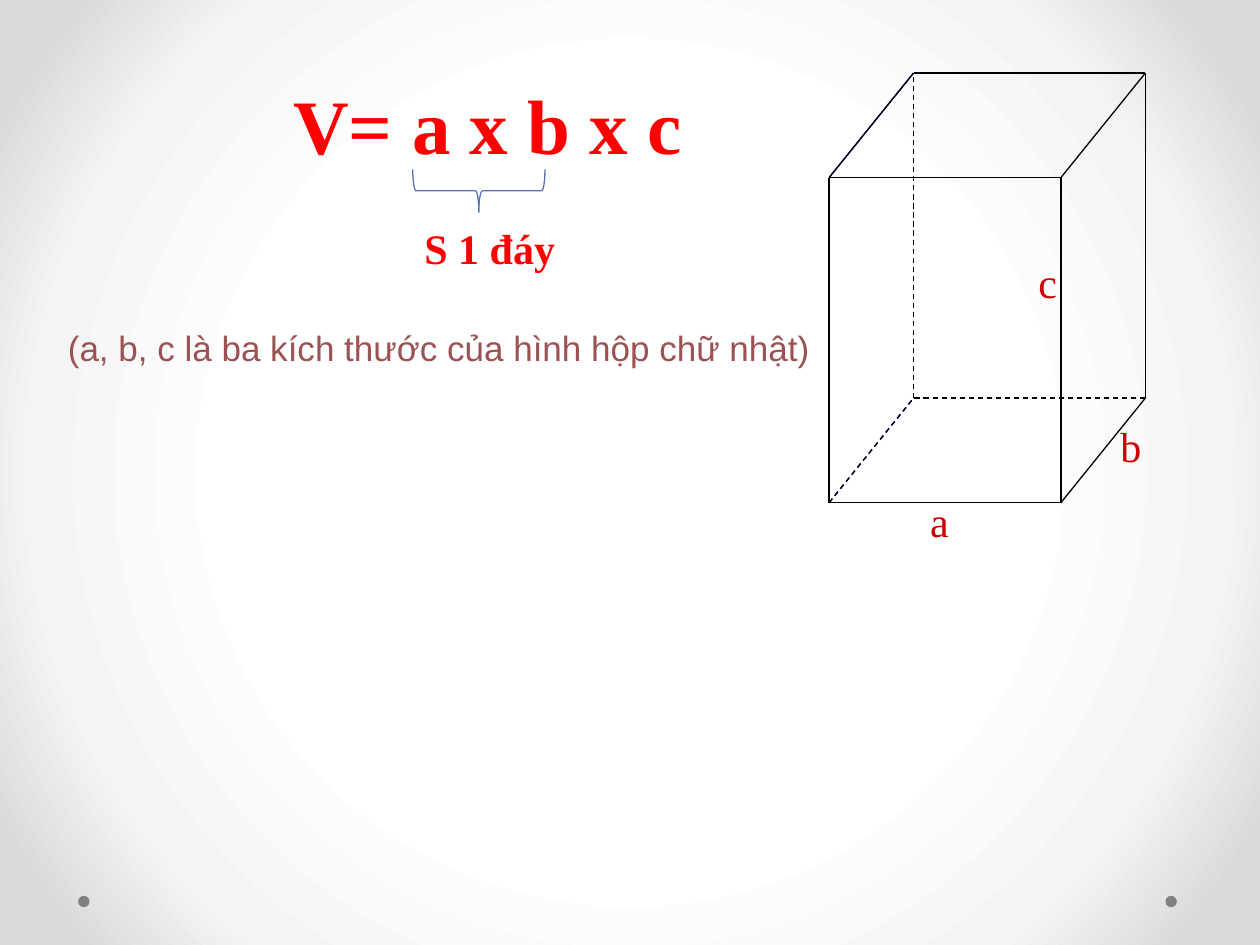
from pptx import Presentation
from pptx.dml.color import RGBColor
from pptx.enum.dml import MSO_LINE
from pptx.enum.shapes import MSO_CONNECTOR, MSO_SHAPE
from pptx.enum.text import MSO_AUTO_SIZE, PP_ALIGN
from pptx.oxml import parse_xml
from pptx.oxml.ns import nsdecls
from pptx.util import Inches, Pt
from lxml.etree import SubElement


def color(code):
    return RGBColor.from_string(code)


class Board:
    font = "Times New Roman"
    red = "FF0000"
    label = "CC0000"
    width = 0.75

    def __init__(self, deck):
        self.slide = deck.slides.add_slide(deck.slide_layouts[6])
        self.shapes = self.slide.shapes

    def back(self, stops):
        marks = "".join(
            f'<a:gs pos="{pos * 1000}"><a:srgbClr val="{code}"/></a:gs>'
            for pos, code in stops
        )
        node = parse_xml(
            f'<p:bg {nsdecls("p", "a")}><p:bgPr><a:gradFill rotWithShape="1">'
            f'<a:gsLst>{marks}</a:gsLst><a:path path="circle">'
            '<a:fillToRect l="50000" t="50000" r="50000" b="50000"/></a:path>'
            '</a:gradFill><a:effectLst/></p:bgPr></p:bg>'
        )
        self.slide.element.cSld.insert(0, node)

    def dot(self, x, y, size, code):
        dot = self.shapes.add_shape(
            MSO_SHAPE.OVAL, Inches(x), Inches(y), Inches(size), Inches(size))
        dot.shadow.inherit = False
        dot.fill.solid()
        dot.fill.fore_color.rgb = color(code)
        dot.line.fill.background()

    def edge(self, start, end, code, dash=False):
        ends = [Inches(v) for v in (*start, *end)]
        edge = self.shapes.add_connector(MSO_CONNECTOR.STRAIGHT, *ends)
        edge.line.color.rgb = color(code)
        edge.line.width = Pt(self.width)
        if dash:
            edge.line.dash_style = MSO_LINE.DASH
        space = nsdecls("a").split('"')[1]
        SubElement(edge.element.spPr, f"{{{space}}}effectLst")

    def brace(self, box, code):
        brace = self.shapes.add_shape(
            MSO_SHAPE.RIGHT_BRACE, *[Inches(v) for v in box])
        brace.rotation = 90
        brace.adjustments[0] = 0.08
        brace.shadow.inherit = False
        brace.fill.background()
        brace.line.color.rgb = color(code)
        brace.line.width = Pt(self.width)

    def text(self, box, words, size, code, font=None, bold=False,
             wrap=False, align=PP_ALIGN.LEFT, before=0):
        frame = self.shapes.add_textbox(*[Inches(v) for v in box]).text_frame
        frame.word_wrap = wrap
        frame.auto_size = MSO_AUTO_SIZE.SHAPE_TO_FIT_TEXT
        line = frame.paragraphs[0]
        line.alignment = align
        line.space_before = Pt(before)
        run = line.add_run()
        run.text = words
        run.font.name = font or self.font
        run.font.size = Pt(size)
        run.font.bold = bold
        run.font.color.rgb = color(code)


def draw_box(board):
    left, right, top, base = 6.58, 8.42, 1.41, 3.99
    dx, dy = 0.67, -0.83
    front = [(left, top), (right, top), (right, base), (left, base)]
    rear = [(x + dx, y + dy) for x, y in front]
    sides = [(face[i], face[(i + 1) % 4])
             for face in (front, rear) for i in range(4)]
    depth = list(zip(front, rear))
    hidden = rear[3]
    for code, joins in (("0000FF", [depth[0], depth[3]]), ("000000", depth)):
        for start, end in sides + joins:
            board.edge(start, end, code, hidden in (start, end))
    for words, x, y, wide in (("a", 7.28, 3.88, 0.35),
                              ("b", 8.79, 3.29, 0.37),
                              ("c", 8.14, 1.99, 0.35)):
        board.text((x, y, wide, 0.5), words, 24, board.label,
                   align=PP_ALIGN.CENTER)


def main():
    deck = Presentation()
    deck.slide_width, deck.slide_height = Inches(10), Inches(7.5)
    board = Board(deck)
    board.back([(50, "FFFFFF"), (76, "F4F4F4"), (92, "DADADA")])
    for x in (9.25, 0.62):
        board.dot(x, 7.11, 0.09, "808080")
    draw_box(board)
    board.text((0.44, 2.54, 7.58, 0.43),
               "(a, b, c là ba kích thước của hình hộp chữ nhật)",
               20, "9C5252", font="Arial", wrap=True, before=10)
    board.brace((3.63, 0.99, 0.34, 1.05), "5C72B2")
    board.text((3.27, 1.72, 1.24, 0.5), "S 1 đáy", 24, board.red, bold=True)
    board.text((2.23, 0.57, 3.38, 0.84), "V= a x b x c", 44, board.red,
               bold=True, wrap=True)
    deck.save("out.pptx")


if __name__ == "__main__":
    main()
